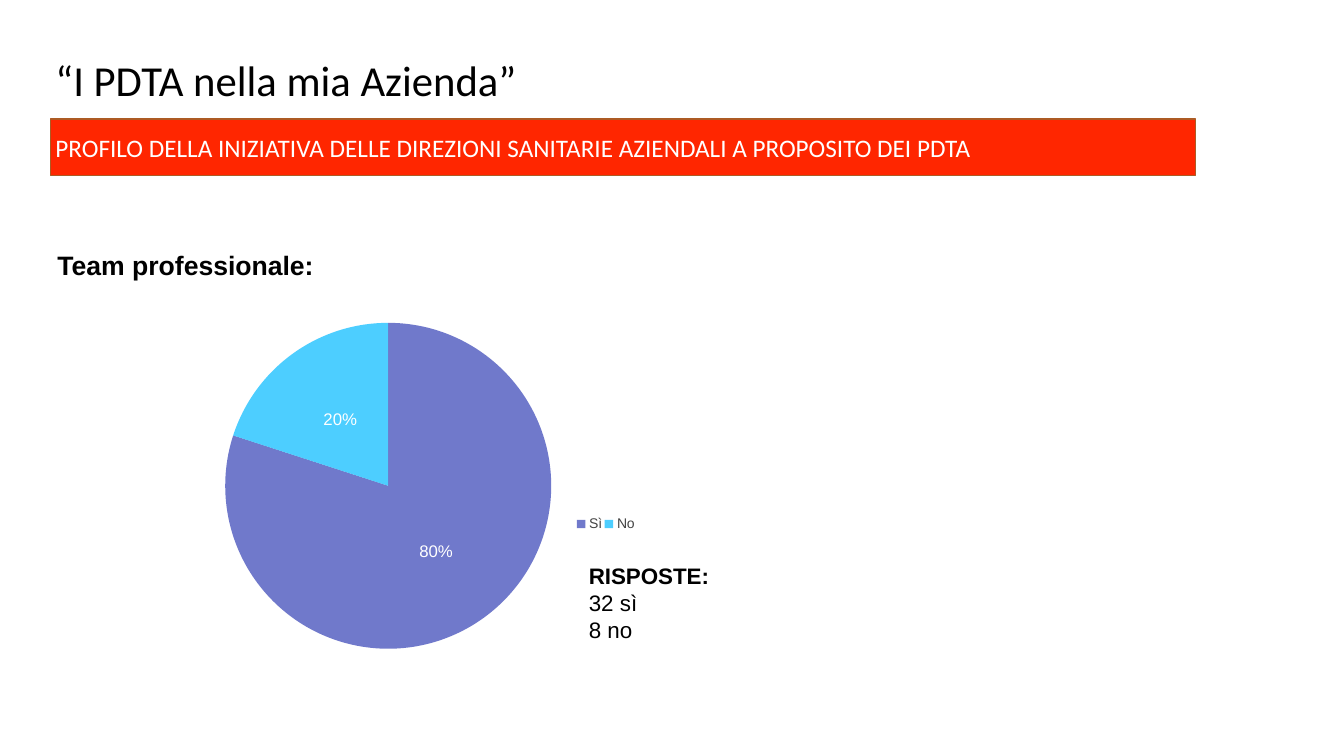
"""Build the slide on PDTA initiatives with a pie chart of professional teams."""
from lxml import etree
from pptx import Presentation
from pptx.chart.data import CategoryChartData
from pptx.dml.color import RGBColor
from pptx.enum.chart import XL_CHART_TYPE, XL_LABEL_POSITION, XL_LEGEND_POSITION
from pptx.enum.shapes import MSO_SHAPE
from pptx.enum.text import MSO_ANCHOR, PP_ALIGN
from pptx.oxml import parse_xml
from pptx.oxml.ns import nsdecls, qn
from pptx.util import Pt

PX = 9144
THEME = {
    "black": RGBColor.from_string("000000"),
    "white": RGBColor.from_string("FFFFFF"),
    "banner": RGBColor.from_string("FF2600"),
    "border": RGBColor.from_string("AD5B24"),
    "legend": RGBColor.from_string("444444"),
    "slices": ["5862C2", "2EC6FF"],
    "alpha": "85000",
    "heading": "Calibri",
    "body": "Arial",
    "title_size": 30.5,
    "banner_size": 18,
    "subtitle_size": 19,
    "answer_size": 16,
    "label_size": 12,
    "legend_size": 10,
}


def write(sp, lines, size, font, color="black", anchor=MSO_ANCHOR.TOP, bold_first=False, wrap=True):
    """Fill a shape with left-aligned paragraphs."""
    tf = sp.text_frame
    tf.text = "\n".join(lines)
    tf.word_wrap = wrap
    tf.vertical_anchor = anchor
    tf.margin_left = tf.margin_right = tf.margin_top = tf.margin_bottom = 5 * PX
    for i, p in enumerate(tf.paragraphs):
        p.alignment = PP_ALIGN.LEFT
        f = p.runs[0].font
        f.size, f.name = Pt(THEME[size]), THEME[font]
        f.color.rgb = THEME[color]
        f.bold = bold_first and i == 0


def place(parent, x, y, w, h):
    """Add a manual layout, in fractions of the chart, to a chart part."""
    layout = parent.find(qn("c:layout"))
    if layout is not None:
        parent.remove(layout)
    inner = '<c:layoutTarget val="inner"/>' if parent.tag == qn("c:plotArea") else ""
    layout = parse_xml(
        f'<c:layout {nsdecls("c")}><c:manualLayout>{inner}'
        '<c:xMode val="edge"/><c:yMode val="edge"/>'
        f'<c:x val="{x}"/><c:y val="{y}"/><c:w val="{w}"/><c:h val="{h}"/>'
        '</c:manualLayout></c:layout>')
    before = parent.find(qn("c:legendPos"))
    parent.insert(0 if before is None else parent.index(before) + 1, layout)


prs = Presentation()
prs.slide_width, prs.slide_height = 1333 * PX, 750 * PX
slide = prs.slides.add_slide(prs.slide_layouts[5])

title = slide.shapes.title
title.left, title.top, title.width, title.height = 50 * PX, 54 * PX, 933 * PX, 56 * PX
write(title, ["“I PDTA nella mia Azienda”"], "title_size", "heading", anchor=MSO_ANCHOR.MIDDLE)
title.text_frame.paragraphs[0].line_spacing = 0.9

banner = slide.shapes.add_shape(MSO_SHAPE.RECTANGLE, 50 * PX, 118 * PX, 1136 * PX, 56 * PX)
banner.shadow.inherit = False
banner.fill.solid()
banner.fill.fore_color.rgb = THEME["banner"]
banner.line.color.rgb = THEME["border"]
banner.line.width = Pt(1)
write(banner, ["PROFILO DELLA INIZIATIVA DELLE DIREZIONI SANITARIE AZIENDALI A PROPOSITO DEI PDTA"],
      "banner_size", "heading", "white", MSO_ANCHOR.MIDDLE)

subtitle = slide.shapes.add_textbox(52 * PX, 242 * PX, 459 * PX, 40 * PX)
write(subtitle, ["Team professionale:"], "subtitle_size", "body", bold_first=True)

answers = slide.shapes.add_textbox(579 * PX, 553 * PX, 137 * PX, 84 * PX)
write(answers, ["RISPOSTE:", "32 sì", "8 no"], "answer_size", "body", bold_first=True, wrap=False)

data = CategoryChartData()
data.categories = ["Sì", "No"]
data.add_series("Team professionale", (80, 20))
chart = slide.shapes.add_chart(
    XL_CHART_TYPE.PIE, 217 * PX, 317 * PX, 415 * PX, 330 * PX, data).chart
chart.has_title = False
chart.font.name, chart.font.size = THEME["heading"], Pt(THEME["legend_size"])
chart.font.color.rgb = THEME["black"]
plot = chart.plots[0]
plot.vary_by_categories = True
for i, color in enumerate(THEME["slices"]):
    fill = plot.series[0].points[i].format.fill
    fill.solid()
    fill.fore_color.rgb = RGBColor.from_string(color)
for rgb in plot.series[0].points[0].format.fill and chart.element.iter(qn("a:srgbClr")):
    if rgb.get("val") in THEME["slices"]:
        etree.SubElement(rgb, qn("a:alpha")).set("val", THEME["alpha"])

plot.has_data_labels = True
labels = plot.data_labels
labels.show_percentage, labels.show_value = True, False
labels.number_format, labels.number_format_is_linked = "0%", False
labels.position = XL_LABEL_POSITION.CENTER
labels.font.size, labels.font.name = Pt(THEME["label_size"]), THEME["body"]
labels.font.color.rgb = THEME["white"]

chart.has_legend = True
legend = chart.legend
legend.position, legend.include_in_layout = XL_LEGEND_POSITION.RIGHT, True
legend.font.size, legend.font.name = Pt(THEME["legend_size"]), THEME["body"]
legend.font.color.rgb = THEME["legend"]
place(chart.element.find(".//" + qn("c:plotArea")), 0.01, 0.01, 0.79, 0.98)
place(chart.element.find(".//" + qn("c:legend")), 0.85, 0.58, 0.15, 0.07)

prs.save("out.pptx")
